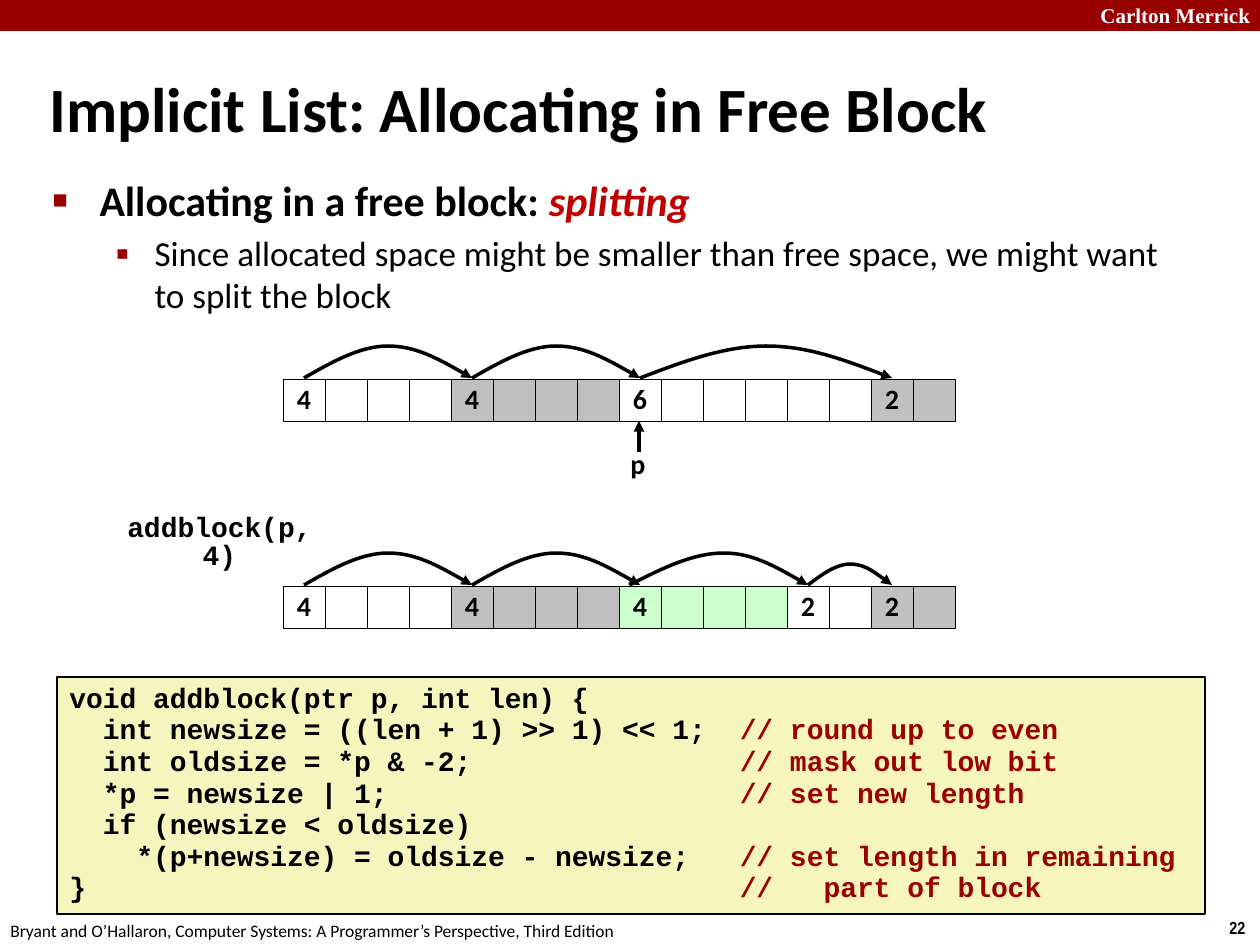
"""Build the slide on splitting a free block in an implicit list."""
import lxml.etree
import pptx
import pptx.dml.color
import pptx.enum.shapes
import pptx.enum.text
import pptx.oxml.ns
import pptx.util

EMU_PER_PX = 914400 / 126
BLACK = pptx.dml.color.RGBColor(0x00, 0x00, 0x00)
WHITE = pptx.dml.color.RGBColor(0xFF, 0xFF, 0xFF)
CRIMSON = pptx.dml.color.RGBColor(0x99, 0x00, 0x00)
RED = pptx.dml.color.RGBColor(0xC0, 0x00, 0x00)
GREY = pptx.dml.color.RGBColor(0xBF, 0xBF, 0xBF)
SILVER = pptx.dml.color.RGBColor(0xC0, 0xC0, 0xC0)
GREEN = pptx.dml.color.RGBColor(0xCC, 0xFF, 0xCC)
CREAM = pptx.dml.color.RGBColor(0xF6, 0xF5, 0xBD)

LEFT = pptx.enum.text.PP_ALIGN.LEFT
CENTER = pptx.enum.text.PP_ALIGN.CENTER
TOP = pptx.enum.text.MSO_ANCHOR.TOP
MIDDLE = pptx.enum.text.MSO_ANCHOR.MIDDLE

TITLE = {"name": "Calibri", "size": pptx.util.Pt(36), "bold": True}
HEADING = {"name": "Calibri", "size": pptx.util.Pt(24), "bold": True}
EMPHASIS = {**HEADING, "italic": True}
DETAIL = {"name": "Calibri", "size": pptx.util.Pt(20), "bold": False}
LABEL = {"name": "Calibri", "size": pptx.util.Pt(16), "bold": True}
CODE = {"name": "Courier New", "size": pptx.util.Pt(16), "bold": True}
BANNER = {"name": "Times New Roman", "size": pptx.util.Pt(12), "bold": True}
NUMBER = {"name": "Arial Narrow", "size": pptx.util.Pt(10), "bold": True}
FOOTER = {"name": "Calibri", "size": pptx.util.Pt(10), "bold": False}

CELL = 42
ROW_LEFT = 283
COMMENT_COLUMN = 40

CODE_LINES = [
    ("void addblock(ptr p, int len) {", ""),
    ("  int newsize = ((len + 1) >> 1) << 1;", "// round up to even"),
    ("  int oldsize = *p & -2;", "// mask out low bit"),
    ("  *p = newsize | 1;", "// set new length"),
    ("  if (newsize < oldsize)", ""),
    ("    *(p+newsize) = oldsize - newsize;", "// set length in remaining"),
    ("}", "//   part of block"),
]
BEFORE_BLOCKS = [(4, WHITE), (4, GREY), (6, WHITE), (2, SILVER)]
AFTER_BLOCKS = [(4, WHITE), (4, GREY), (4, GREEN), (2, WHITE), (2, SILVER)]
BEFORE_ARCS = [(0, 2, 4, 32), (4, 6, 8, 32), (8, 11, 14, 32)]
AFTER_ARCS = [(0, 2, 4, 32), (4, 6, 8, 32), (7.75, 10, 12, 32), (12, 13, 14, 21)]


def px(*lengths):
    """Turn pixel lengths into a list of EMU lengths."""
    return [pptx.util.Emu(round(length * EMU_PER_PX)) for length in lengths]


def set_values(target, values):
    """Set each attribute named in a dict."""
    for name, value in values.items():
        setattr(target, name, value)


def add_run(paragraph, text, font_format, color=BLACK):
    """Append one formatted run to a paragraph."""
    run = paragraph.add_run()
    run.text = text
    set_values(run.font, font_format)
    run.font.color.rgb = color


def add_arrowhead(shape):
    """Put a triangle at the end of a line."""
    line = shape.line._get_or_add_ln()
    lxml.etree.SubElement(line, pptx.oxml.ns.qn("a:tailEnd"), type="triangle")


def set_line(shape, width):
    """Give a shape or connector a black line."""
    shape.line.color.rgb = BLACK
    shape.line.width = pptx.util.Pt(width)


def add_box(slide, bounds, fill, line_width=None):
    """Add a flat rectangle, with a black outline if a width is given."""
    kind = pptx.enum.shapes.MSO_SHAPE.RECTANGLE
    shape = slide.shapes.add_shape(kind, *px(*bounds))
    shape.shadow.inherit = False
    shape.fill.solid()
    shape.fill.fore_color.rgb = fill
    if line_width:
        set_line(shape, line_width)
    else:
        shape.line.fill.background()
    shape.text_frame.word_wrap = False
    return shape


def add_label(slide, bounds, text, font_format, color=BLACK, spacing=1.0, align=LEFT):
    """Add one line of text that does not wrap."""
    frame = slide.shapes.add_textbox(*px(*bounds)).text_frame
    frame.word_wrap = False
    paragraph = frame.paragraphs[0]
    set_values(paragraph, {"alignment": align, "line_spacing": spacing})
    add_run(paragraph, text, font_format, color)
    return frame


def bend_segments(shape, peak, width, height):
    """Turn the rising and falling segments of an outline into Bézier curves."""
    qn = pptx.oxml.ns.qn
    fall = width - peak
    curves = [
        [(peak / 3, height / 2), (peak * 2 / 3, 0), (peak, 0)],
        [(peak + fall / 3, 0), (peak + fall * 2 / 3, height / 2), (width, height)],
    ]
    segments = list(shape._element.iter(qn("a:lnTo")))
    for segment, points in zip(segments, curves):
        curve = lxml.etree.Element(qn("a:cubicBezTo"))
        for x, y in points:
            lxml.etree.SubElement(curve, qn("a:pt"), x=str(round(x)), y=str(round(y)))
        segment.getparent().replace(segment, curve)


def add_arc(slide, cells, base, height):
    """Add a curved arrow from one cell over a peak to another cell."""
    left, middle, right = px(*(ROW_LEFT + CELL * (cell + 0.5) for cell in cells))
    bottom, top = px(base, base - height)
    builder = slide.shapes.build_freeform(left, bottom)
    builder.add_line_segments([(middle, top), (right, bottom)], close=False)
    shape = builder.convert_to_shape()
    bend_segments(shape, middle - left, right - left, bottom - top)
    shape.shadow.inherit = False
    shape.fill.background()
    set_line(shape, 2)
    add_arrowhead(shape)


def add_heap_row(slide, top, blocks, arcs):
    """Add a row of word cells, with each block's size in its first cell."""
    left = ROW_LEFT
    for size, fill in blocks:
        for word in range(size):
            cell = add_box(slide, (left, top, CELL, CELL), fill, 0.25)
            if word == 0:
                cell.text_frame.vertical_anchor = MIDDLE
                paragraph = cell.text_frame.paragraphs[0]
                set_values(paragraph, {"alignment": CENTER, "line_spacing": 0.98})
                add_run(paragraph, str(size), LABEL)
            left += CELL
    for *cells, height in arcs:
        add_arc(slide, cells, top - 1, height)


def add_pointer(slide):
    """Add the upward arrow and the name of the pointer."""
    kind = pptx.enum.shapes.MSO_CONNECTOR.STRAIGHT
    connector = slide.shapes.add_connector(kind, *px(639, 452, 639, 421))
    set_line(connector, 2)
    add_arrowhead(connector)
    properties = connector._element.spPr
    lxml.etree.SubElement(properties, pptx.oxml.ns.qn("a:effectLst"))
    add_label(slide, (618, 442, 40, 47), "p", LABEL, spacing=0.98)


def set_bullet(paragraph, character, percent, indent, hanging):
    """Give a paragraph a crimson bullet and a hanging indent."""
    properties = paragraph._p.get_or_add_pPr()
    margin, offset = px(indent, -hanging)
    properties.set("marL", str(margin))
    properties.set("indent", str(offset))
    qn = pptx.oxml.ns.qn
    color = lxml.etree.SubElement(properties, qn("a:buClr"))
    lxml.etree.SubElement(color, qn("a:srgbClr"), val=str(CRIMSON))
    lxml.etree.SubElement(properties, qn("a:buSzPct"), val=str(percent * 1000))
    lxml.etree.SubElement(properties, qn("a:buChar"), char=character)


def place(shape, bounds, anchor):
    """Move a placeholder and fix its text layout."""
    set_values(shape, dict(zip(("left", "top", "width", "height"), px(*bounds))))
    set_values(shape.text_frame, {
        "vertical_anchor": anchor, "word_wrap": True,
        "auto_size": pptx.enum.text.MSO_AUTO_SIZE.NONE})


def fill_placeholders(slide):
    """Write the title and the bulleted list."""
    title, body = slide.shapes.title, slide.placeholders[1]
    place(title, (37, 68, 1187, 79), MIDDLE)
    paragraph = title.text_frame.paragraphs[0]
    paragraph.alignment = LEFT
    add_run(paragraph, "Implicit List: Allocating in Free Block", TITLE)

    place(body, (40, 168, 1145, 719), TOP)
    heading = body.text_frame.paragraphs[0]
    set_bullet(heading, "■", 60, 47, 47)
    add_run(heading, "Allocating in a free block: ", HEADING)
    add_run(heading, "splitting", EMPHASIS, RED)
    detail = body.text_frame.add_paragraph()
    detail.level = 1
    set_bullet(detail, "▪", 110, 102, 39)
    add_run(detail, "Since allocated space might be smaller than free space, "
            "we might want to split the block", DETAIL)


def add_code(slide):
    """Add the listing with its comments lined up in one column."""
    frame = add_box(slide, (57, 677, 1148, 237), CREAM, 1).text_frame
    frame.vertical_anchor = TOP
    for index, (code, comment) in enumerate(CODE_LINES):
        paragraph = frame.add_paragraph() if index else frame.paragraphs[0]
        set_values(paragraph, {"alignment": LEFT, "line_spacing": 0.94})
        add_run(paragraph, code.ljust(COMMENT_COLUMN) if comment else code, CODE)
        if comment:
            add_run(paragraph, comment, CODE, CRIMSON)


def main():
    """Build and save the presentation."""
    presentation = pptx.Presentation()
    set_values(presentation, dict(zip(("slide_width", "slide_height"), px(1260, 945))))
    slide = presentation.slides.add_slide(presentation.slide_layouts[1])
    add_box(slide, (0, 0, 1260, 31), CRIMSON)
    add_label(slide, (1088, -4, 180, 38), "Carlton Merrick", BANNER, WHITE)
    add_label(slide, (1217, 911, 43, 34), "22", NUMBER)
    add_label(slide, (-2, 914, 640, 34), "Bryant and O’Hallaron, Computer Systems: "
              "A Programmer’s Perspective, Third Edition", FOOTER)
    fill_placeholders(slide)
    add_code(slide)
    add_heap_row(slide, 379, BEFORE_BLOCKS, BEFORE_ARCS)
    add_pointer(slide)
    add_heap_row(slide, 586, AFTER_BLOCKS, AFTER_ARCS)
    add_label(slide, (94, 508, 251, 42), "addblock(p, 4)", CODE, spacing=0.85, align=CENTER)
    presentation.save("out.pptx")


if __name__ == "__main__":
    main()
